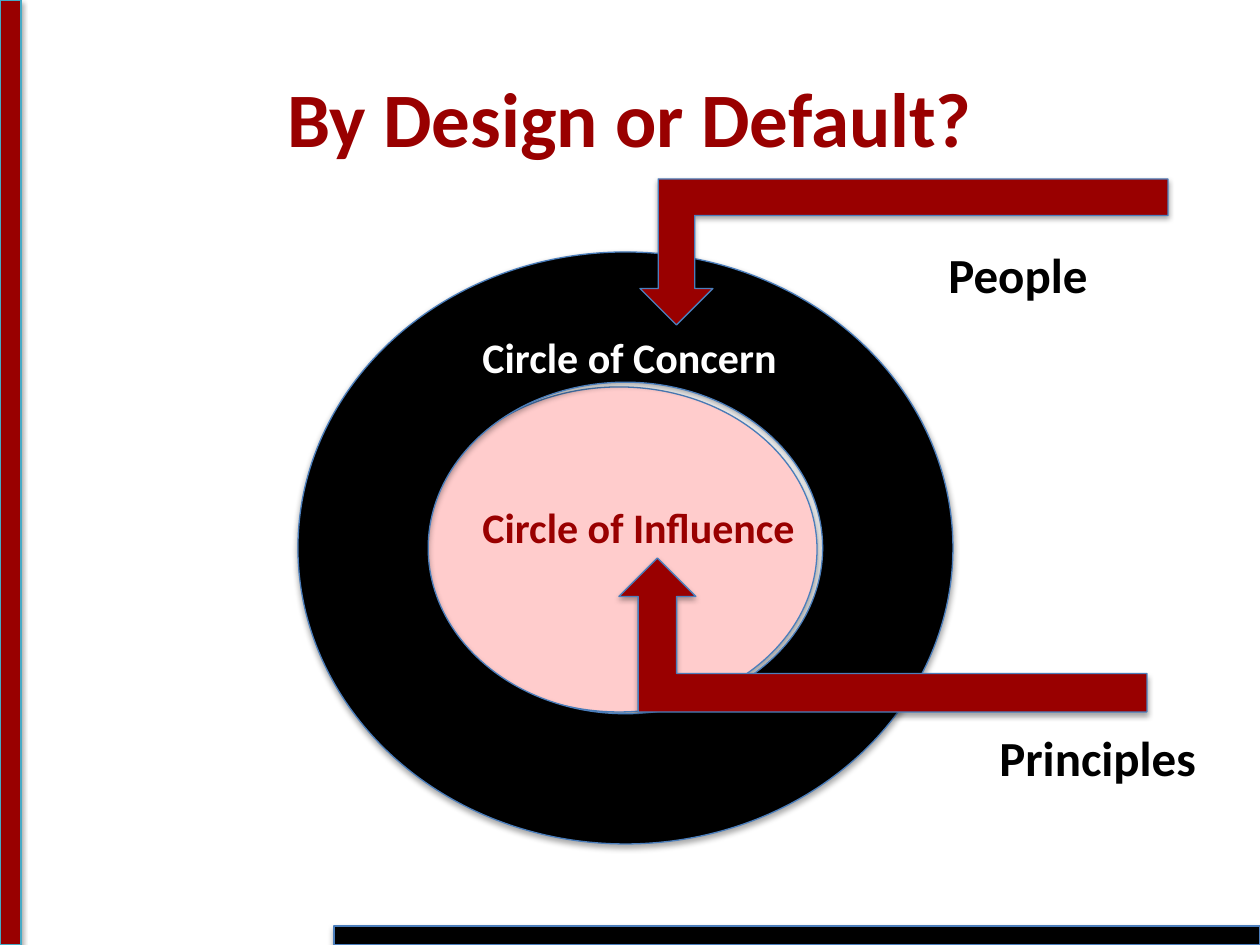
from pptx import Presentation
from pptx import util as u
from pptx.dml.color import RGBColor
from pptx.enum import shapes, text

PX = 914400 / 126
RED = RGBColor(0x99, 0x00, 0x00)
PINK = RGBColor(0xFF, 0xCC, 0xCC)
BLACK = RGBColor(0x00, 0x00, 0x00)
WHITE = RGBColor(0xFF, 0xFF, 0xFF)
BLUE = RGBColor(0x4B, 0x7E, 0xBC)
TEAL = RGBColor(0x46, 0xAA, 0xC5)
KIND = shapes.MSO_SHAPE


def scale(*sizes):
    return [u.Emu(round(size * PX)) for size in sizes]


def add_shape(slide, kind, box, fill, line=BLUE):
    shape = slide.shapes.add_shape(kind, *scale(*box))
    shape.fill.solid()
    shape.fill.fore_color.rgb = fill
    shape.line.color.rgb = line
    shape.line.width = u.Pt(0.75)
    return shape


def add_arrow(slide, box, flips):
    arrow = add_shape(slide, KIND.BENT_UP_ARROW, box, RED)
    for flip in flips:
        arrow.element.spPr.xfrm.set(flip, "1")


def add_label(slide, words, box, size, color, wrap=False):
    label = slide.shapes.add_textbox(*scale(*box))
    frame = label.text_frame
    frame.text = words
    frame.word_wrap = wrap
    font = frame.paragraphs[0].runs[0].font
    font.name = "Calibri"
    font.size = u.Pt(size)
    font.bold = True
    font.color.rgb = color
    return frame


def add_title(slide, words):
    frame = add_label(slide, words, (63, 38, 1134, 158), 44, RED, True)
    frame.vertical_anchor = text.MSO_ANCHOR.MIDDLE
    frame.paragraphs[0].alignment = text.PP_ALIGN.CENTER


def main():
    deck = Presentation()
    deck.slide_width, deck.slide_height = scale(1260, 945)
    slide = deck.slides.add_slide(deck.slide_layouts[6])

    add_shape(slide, KIND.RECTANGLE, (0, 0, 21, 945), RED, TEAL)
    add_shape(slide, KIND.RECTANGLE, (334, 926, 926, 19), BLACK)
    add_shape(slide, KIND.OVAL, (421, 387, 396, 325), PINK)
    add_title(slide, "By Design or Default?")
    ring = add_shape(slide, KIND.DONUT, (298, 252, 655, 592), BLACK)
    ring.adjustments[0] = 0.22
    add_label(slide, "Circle of Influence", (470, 495, 341, 63), 24, RED)
    add_label(slide, "Circle of Concern", (470, 325, 324, 63), 24, WHITE)
    add_arrow(slide, (619, 558, 528, 154), ["flipH"])
    add_label(slide, "Principles", (987, 721, 224, 72), 28, BLACK)
    add_arrow(slide, (640, 179, 528, 146), ["flipH", "flipV"])
    add_label(slide, "People", (936, 238, 166, 72), 28, BLACK)

    deck.save("out.pptx")


if __name__ == "__main__":
    main()
